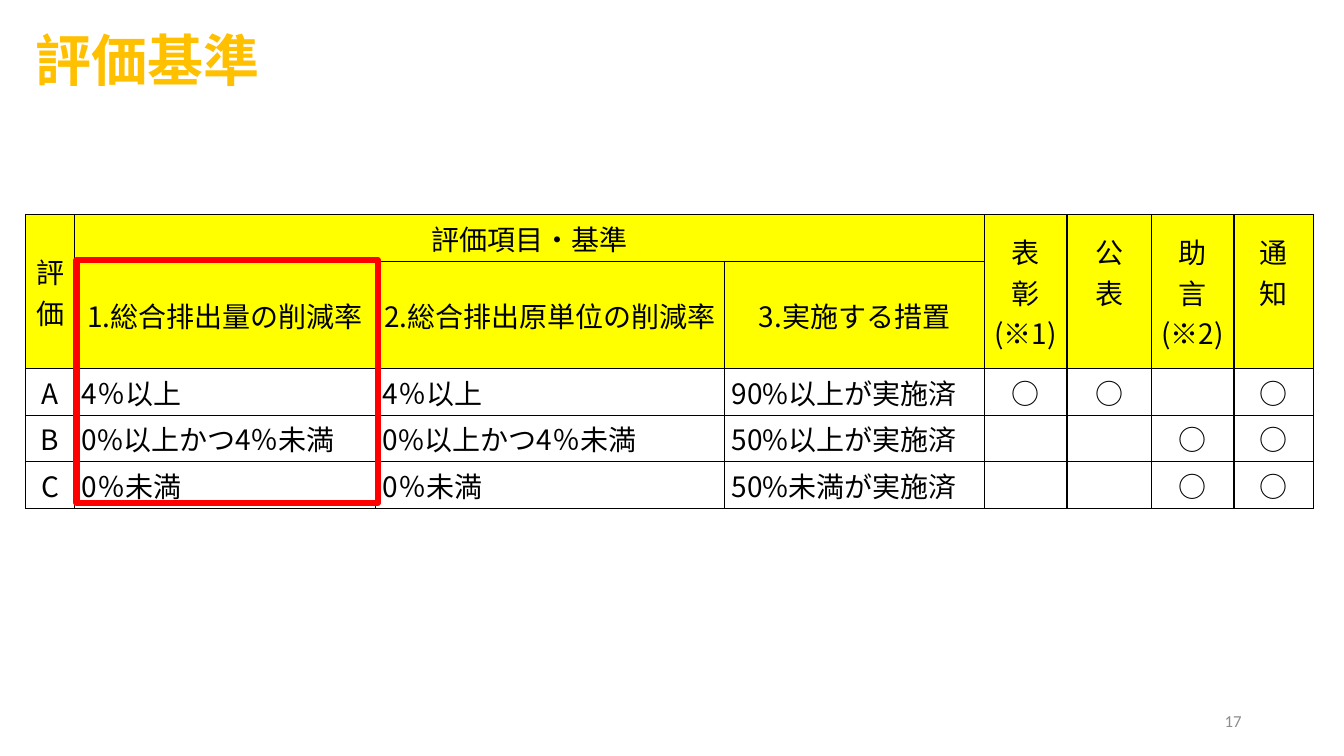
import pptx
import pptx.util
import pptx.dml.color
import pptx.enum.shapes
import pptx.enum.text
import pptx.oxml
import pptx.oxml.ns
import lxml.etree

Cm, Pt = pptx.util.Cm, pptx.util.Pt
ALIGN = pptx.enum.text.PP_ALIGN
ANCHOR = pptx.enum.text.MSO_ANCHOR

# Content
TITLE = "評価基準"
PAGE = "17"
HEADERS = [  # row, column, rows spanned, columns spanned, lines
    (0, 0, 2, 1, ["評価"]),
    (0, 1, 1, 3, ["評価項目・基準"]),
    (0, 4, 2, 1, ["表", "彰", "(※1)"]),
    (0, 5, 2, 1, ["公", "表"]),
    (0, 6, 2, 1, ["助", "言", "(※2)"]),
    (0, 7, 2, 1, ["通", "知"]),
    (1, 1, 1, 1, ["1.総合排出量の削減率"]),
    (1, 2, 1, 1, ["2.総合排出原単位の削減率"]),
    (1, 3, 1, 1, ["3.実施する措置"]),
]
GRADES = [
    ("A", "4％以上", "4％以上", "90%以上が実施済", "○", "○", "", "○"),
    ("B", "0%以上かつ4％未満", "0%以上かつ4％未満", "50%以上が実施済", "", "", "○", "○"),
    ("C", "0％未満", "0％未満", "50%未満が実施済", "", "", "○", "○"),
]

# Layout, in centimetres
COLS = [1.23, 7.59, 8.79, 6.55, 2.08, 2.13, 2.08, 2.01]
ROWS = [1.17, 2.16, 1.17, 1.17, 1.17]
LEFT, TOP = 0.65, 5.41
LINE_HEIGHT = 1.02
HIGHLIGHT_HEIGHT = 6.13  # reaches the foot of the grade C row
FONT = "Noto Sans CJK JP"


def color(value):
    return pptx.dml.color.RGBColor.from_string(value)


def write(tf, text, size=20, font=FONT, fill="000000", bold=False, align=ALIGN.CENTER):
    """Write one paragraph for each line of text."""
    for i, line in enumerate(text.split("\n")):
        p = tf.paragraphs[0] if i == 0 else tf.add_paragraph()
        p.alignment = align
        p.font.size = Pt(size)
        if not line:
            continue
        r = p.add_run()
        r.text = line
        r.font.size, r.font.name, r.font.bold = Pt(size), font, bold
        r.font.color.rgb = color(fill)
        ea = lxml.etree.SubElement(r.font._element, pptx.oxml.ns.qn("a:ea"))
        ea.set("typeface", font)


def text_box(s, x, y, w, h, text, anchor=ANCHOR.TOP, **fmt):
    tf = s.shapes.add_textbox(Cm(x), Cm(y), Cm(w), Cm(h)).text_frame
    tf.word_wrap = True
    tf.vertical_anchor = anchor
    write(tf, text, **fmt)


def style_cell(cell, fill=None):
    cell.vertical_anchor = ANCHOR.MIDDLE
    cell.margin_left = cell.margin_right = Cm(0.18)
    cell.margin_top = cell.margin_bottom = 0
    if fill:
        cell.fill.solid()
        cell.fill.fore_color.rgb = color(fill)
    else:
        cell.fill.background()
    tcPr = cell._tc.get_or_add_tcPr()
    for i, side in enumerate("LRTB"):
        tcPr.insert(i, pptx.oxml.parse_xml(
            f'<a:ln{side} {pptx.oxml.ns.nsdecls("a")} w="{Pt(1)}"><a:solidFill>'
            f'<a:srgbClr val="000000"/></a:solidFill></a:ln{side}>'))


def add_criteria_table(s):
    table = s.shapes.add_table(len(ROWS), len(COLS), Cm(LEFT), Cm(TOP),
                               Cm(sum(COLS)), Cm(sum(ROWS))).table
    table.first_row = table.horz_banding = False
    for col, width in zip(table.columns, COLS):
        col.width = Cm(width)
    for row, height in zip(table.rows, ROWS):
        row.height = Cm(height)
    for r in range(len(ROWS)):
        for c in range(len(COLS)):
            style_cell(table.cell(r, c), "FFFF00" if r < 2 else None)

    # Header cells; two-line labels keep level with the three-line ones
    for r, c, down, across, lines in HEADERS:
        cell = table.cell(r, c)
        if down * across > 1:
            cell.merge(table.cell(r + down - 1, c + across - 1))
        if len(lines) == 2:
            cell.margin_bottom = Cm(LINE_HEIGHT)
        write(cell.text_frame, "\n".join(lines))

    # Grade rows
    for r, grade in enumerate(GRADES, start=2):
        for c, text in enumerate(grade):
            align = ALIGN.LEFT if 1 <= c <= 3 else ALIGN.CENTER
            write(table.cell(r, c).text_frame, text, align=align)


def add_highlight(s):
    sp = s.shapes.add_shape(pptx.enum.shapes.MSO_SHAPE.RECTANGLE,
                            Cm(LEFT + COLS[0] + 0.05), Cm(TOP + ROWS[0] - 0.03),
                            Cm(COLS[1]), Cm(HIGHLIGHT_HEIGHT))
    sp.shadow.inherit = False
    sp.fill.background()
    sp.line.color.rgb = color("FF0000")
    sp.line.width = Pt(4.5)


def main():
    prs = pptx.Presentation()
    prs.slide_width, prs.slide_height = Cm(33.87), Cm(19.05)
    s = prs.slides.add_slide(prs.slide_layouts[6])
    text_box(s, LEFT, 0.53, 23.27, 1.96, TITLE, size=40, fill="FFC000",
             bold=True, align=ALIGN.LEFT)
    text_box(s, 23.92, 17.65, 7.62, 1.02, PAGE, anchor=ANCHOR.MIDDLE, size=12,
             font="Calibri", fill="8C8C8C", align=ALIGN.RIGHT)
    add_criteria_table(s)
    add_highlight(s)
    prs.save("out.pptx")


if __name__ == "__main__":
    main()
